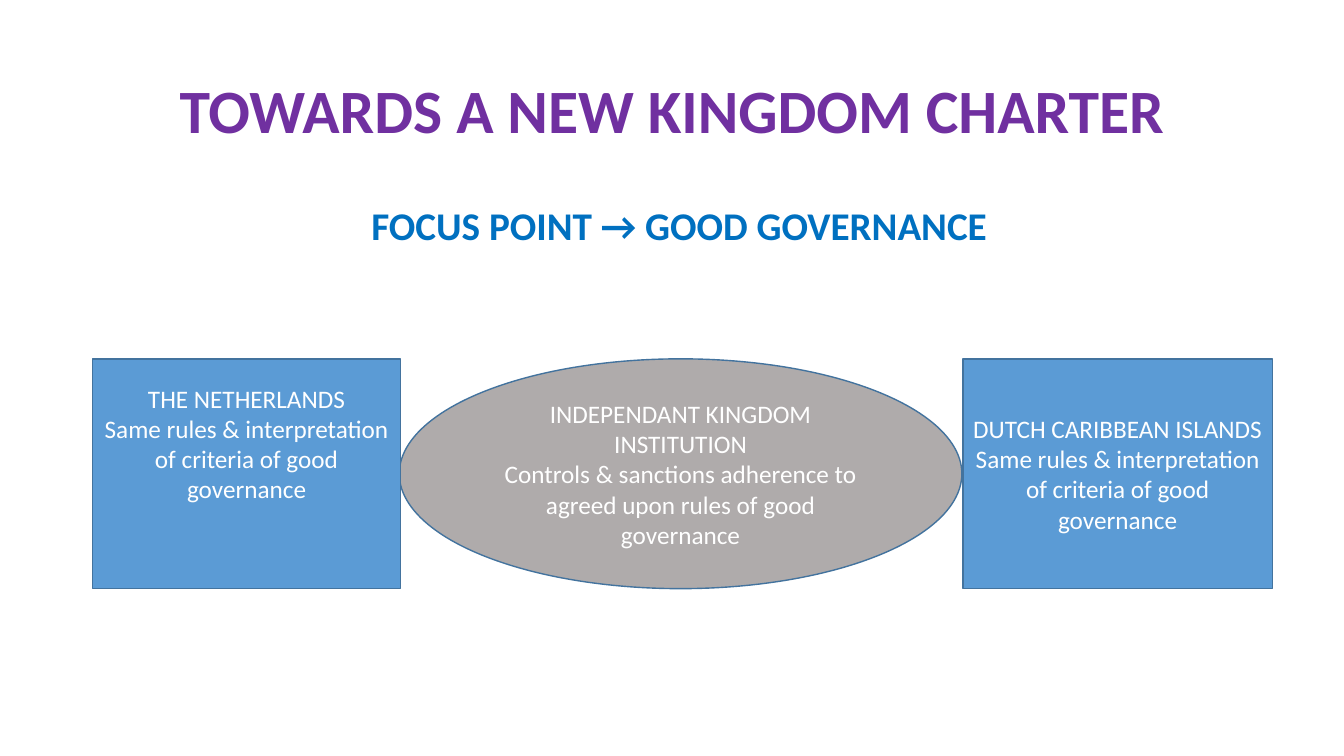
import dataclasses

import pptx
import pptx.dml.color
import pptx.enum.shapes
import pptx.enum.text
import pptx.slide
import pptx.text.text
import pptx.util

Inches = pptx.util.Inches
Shapes = pptx.enum.shapes.MSO_SHAPE
Anchor = pptx.enum.text.MSO_ANCHOR

FONT = "Calibri"
WHITE, OUTLINE = "FFFFFF", "43739E"
BLUE, GREY = "5B9BD5", "AFABAB"
ROW_TOP, ROW_HEIGHT = 3.56, 2.28
SHARED_RULES = "Same rules & interpretation of criteria of good governance"


@dataclasses.dataclass
class Heading:
    text: str
    box: tuple[float, float, float, float]
    size: int
    color: str
    anchor: Anchor


@dataclasses.dataclass
class Party:
    kind: Shapes
    left: float
    width: float
    fill: str
    name: str
    role: str
    bottom_margin: float = 0.05


HEADINGS = [
    Heading("TOWARDS A NEW KINGDOM CHARTER", (0.92, 0.4, 11.5, 1.45), 44, "7030A0", Anchor.MIDDLE),
    Heading("FOCUS POINT → GOOD GOVERNANCE", (0.92, 2, 11.63, 4.76), 28, "0070C0", Anchor.TOP),
]

PARTIES = [
    Party(Shapes.OVAL, 3.96, 5.58, GREY, "INDEPENDANT KINGDOM INSTITUTION",
          "Controls & sanctions adherence to agreed upon rules of good governance"),
    Party(Shapes.RECTANGLE, 0.92, 3.05, BLUE, "THE NETHERLANDS", SHARED_RULES, 0.65),
    Party(Shapes.RECTANGLE, 9.55, 3.07, BLUE, "DUTCH CARIBBEAN ISLANDS", SHARED_RULES),
]


def rgb(color: str) -> pptx.dml.color.RGBColor:
    return pptx.dml.color.RGBColor.from_string(color)


def write_text(frame: pptx.text.text.TextFrame, lines: list[str], size: int, color: str,
               anchor: Anchor, bold: bool = False, line_spacing: float = 1.0) -> None:
    frame.word_wrap = True
    frame.vertical_anchor = anchor
    frame.text = "\n".join(lines)
    for paragraph in frame.paragraphs:
        paragraph.alignment = pptx.enum.text.PP_ALIGN.CENTER
        paragraph.line_spacing = line_spacing
        paragraph.font.name = FONT
        paragraph.font.size = pptx.util.Pt(size)
        paragraph.font.bold = bold
        paragraph.font.color.rgb = rgb(color)


def add_heading(slide: pptx.slide.Slide, heading: Heading) -> None:
    shape = slide.shapes.add_textbox(*map(Inches, heading.box))
    write_text(shape.text_frame, [heading.text], heading.size, heading.color,
               heading.anchor, bold=True, line_spacing=0.9)


def add_party(slide: pptx.slide.Slide, party: Party) -> None:
    shape = slide.shapes.add_shape(party.kind, Inches(party.left), Inches(ROW_TOP),
                                   Inches(party.width), Inches(ROW_HEIGHT))
    shape.shadow.inherit = False
    shape.fill.solid()
    shape.fill.fore_color.rgb = rgb(party.fill)
    shape.line.color.rgb = rgb(OUTLINE)
    shape.line.width = pptx.util.Pt(1)
    shape.text_frame.margin_bottom = Inches(party.bottom_margin)
    write_text(shape.text_frame, [party.name, party.role], 18, WHITE, Anchor.MIDDLE)


def main() -> None:
    presentation = pptx.Presentation()
    presentation.slide_width = Inches(13.33)
    presentation.slide_height = Inches(7.5)
    slide = presentation.slides.add_slide(presentation.slide_layouts[6])

    # Title and focus point
    for heading in HEADINGS:
        add_heading(slide, heading)

    # Institution between the two parties
    for party in PARTIES:
        add_party(slide, party)

    presentation.save("out.pptx")


if __name__ == "__main__":
    main()
